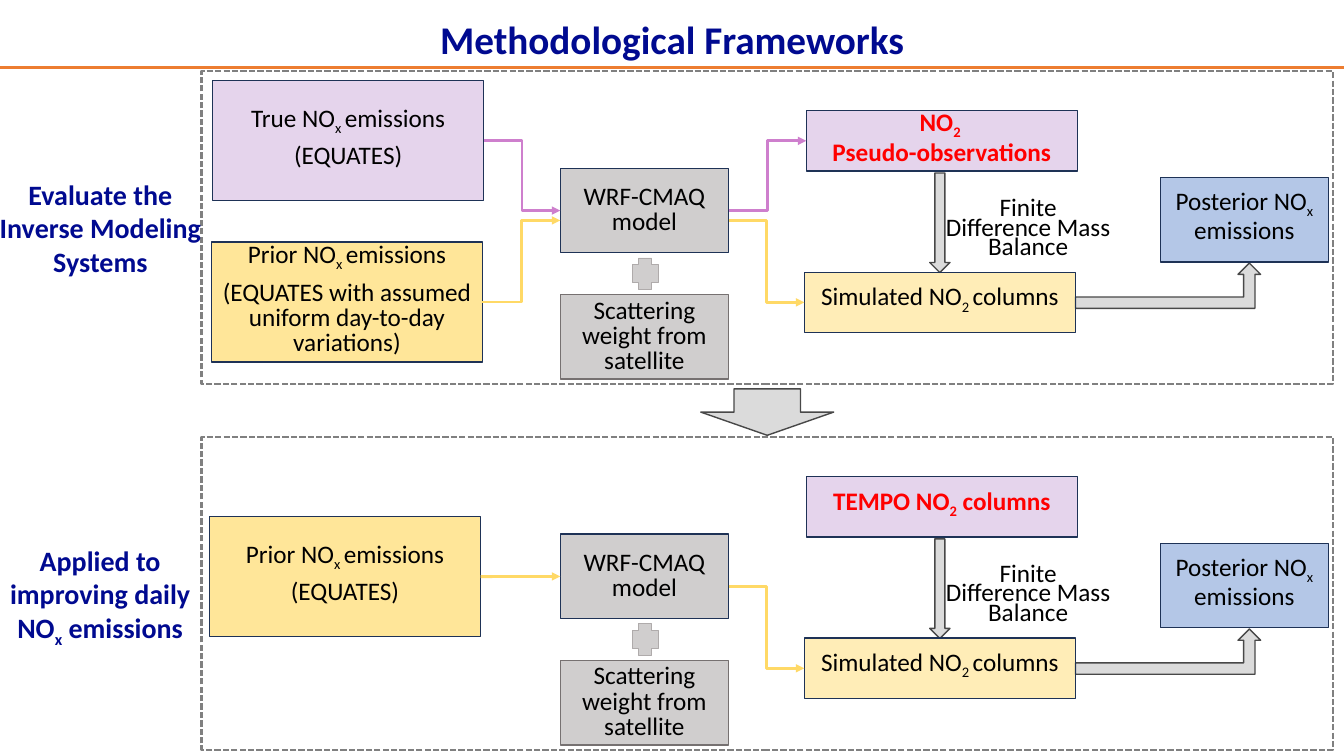
from dataclasses import dataclass

from lxml.etree import SubElement
from pptx import Presentation
from pptx.dml.color import RGBColor
from pptx.enum.dml import MSO_LINE
from pptx.enum.shapes import MSO_CONNECTOR, MSO_SHAPE
from pptx.enum.text import MSO_ANCHOR, MSO_AUTO_SIZE, PP_ALIGN
from pptx.oxml.ns import qn
from pptx.util import Cm, Pt


@dataclass(frozen=True)
class Theme:
    font: str = "Calibri"
    title_size: int = 28
    label_size: int = 20
    body_size: int = 18
    navy: str = "000A90"
    black: str = "000000"
    red: str = "FF0000"
    outline: str = "1E3256"
    lilac: str = "DBC2E5"
    purple: str = "CE7FCD"
    sand: str = "FFE699"
    gold: str = "FFD966"
    blue: str = "B4C7E7"
    grey: str = "D0CECE"
    grey_line: str = "767171"
    plus_line: str = "AFABAB"
    arrow_fill: str = "DBDBDB"
    arrow_line: str = "484848"
    frame: str = "808080"
    rule: str = "ED7D31"


theme = Theme()
presentation = Presentation()
presentation.slide_width, presentation.slide_height = Cm(33.87), Cm(19.05)
slide = presentation.slides.add_slide(presentation.slide_layouts[5])
shapes = slide.shapes


def write(shape, paragraphs, size=theme.body_size, color=theme.black, bold=False,
          spacing=None, gap=0):
    """Fill a shape with centred paragraphs; every second run is a subscript."""
    frame = shape.text_frame
    frame.word_wrap = True
    for number, runs in enumerate(paragraphs):
        paragraph = frame.add_paragraph() if number else frame.paragraphs[0]
        paragraph.alignment = PP_ALIGN.CENTER
        if spacing:
            paragraph.line_spacing = Pt(spacing)
        if number and gap:
            paragraph.space_before = Pt(gap)
        for position, text in enumerate(runs):
            run = paragraph.add_run()
            run.text = text
            run.font.name, run.font.size, run.font.bold = theme.font, Pt(size), bold
            run.font.color.rgb = RGBColor.from_string(color)
            if position % 2:
                run.font._element.set("baseline", "-25000")


def block(box, fill, outline=theme.outline, kind=MSO_SHAPE.RECTANGLE, width=1, opacity=100):
    shape = shapes.add_shape(kind, *map(Cm, box))
    shape.shadow.inherit = False
    shape.line.color.rgb = RGBColor.from_string(outline)
    shape.line.width = Pt(width)
    if fill is None:
        shape.fill.background()
        return shape
    shape.fill.solid()
    shape.fill.fore_color.rgb = RGBColor.from_string(fill)
    if opacity < 100:
        color = shape._element.spPr.find(qn("a:solidFill"))[0]
        SubElement(color, qn("a:alpha")).set("val", str(opacity * 1000))
    shape.text_frame.vertical_anchor = MSO_ANCHOR.MIDDLE
    return shape


# Title and rule
title = shapes.title
title.left, title.top, title.width, title.height = Cm(0), Cm(0.25), Cm(33.87), Cm(1.45)
title.text_frame.vertical_anchor = MSO_ANCHOR.TOP
title.text_frame.auto_size = MSO_AUTO_SIZE.NONE
write(title, [["Methodological Frameworks"]], theme.title_size, theme.navy, True)

# Panels: shift, label left and width, label, observations, emission sources
panel_pitch = 9.22
true_source = (5.36, 2.03, theme.lilac, 70, theme.purple,
               [["True NO", "x ", "emissions"], ["(EQUATES)"]])
assumed_source = (5.33, 6.1, theme.sand, 100, theme.gold,
                  [["Prior NO", "x ", "emissions"],
                   ["(EQUATES with assumed uniform day-to-day variations)"]])
prior_source = (5.28, 13.02, theme.sand, 100, theme.gold,
                [["Prior NO", "x ", "emissions"], ["(EQUATES)"]])
panels = [
    (-0.33, 5.72, ["Evaluate the Inverse Modeling Systems"],
     [["NO", "2 "], ["Pseudo-observations"]], [true_source, assumed_source]),
    (-0.08, 5.21, ["Applied to improving daily NO", "x", " emissions"],
     [["TEMPO NO", "2", " columns"]], [prior_source]),
]

flows = []  # kind, colour, source, source offset, target, target offset
for index, (label_left, label_width, label_runs, observed, sources) in enumerate(panels):
    shift = index * panel_pitch

    finite_difference = shapes.add_textbox(Cm(23.57), Cm(4.95 + shift), Cm(4.68), Cm(2.13))
    write(finite_difference, [["Finite Difference Mass Balance"]], spacing=14.2)
    mass_balance = block((22.43, 5.36 + shift, 2.51, 0.51), theme.arrow_fill,
                         theme.arrow_line, MSO_SHAPE.RIGHT_ARROW)
    mass_balance.rotation = 90
    block((27.1, 6.63 + shift, 4.67, 1.14), theme.arrow_fill, theme.arrow_line,
          MSO_SHAPE.BENT_UP_ARROW)

    posterior = block((29.24, 4.47 + shift, 4.24, 2.13), theme.blue)
    write(posterior, [["Posterior NO", "x ", "emissions"]], spacing=18)
    model = block((14.12, 4.24 + shift, 4.24, 2.13), theme.grey)
    write(model, [["WRF-CMAQ model"]], spacing=18)
    block((15.93, 6.5 + shift, 0.66, 0.79), theme.grey, theme.plus_line,
          MSO_SHAPE.CROSS, 0.5)
    scattering = block((14.12, 7.42 + shift, 4.24, 2.13), theme.grey, theme.grey_line)
    write(scattering, [["Scattering weight from satellite"]], spacing=18)
    simulated = block((20.27, 6.86 + shift, 6.83, 1.52), theme.sand, opacity=70)
    write(simulated, [["Simulated NO", "2 ", "columns"]], spacing=18)
    observations = block((20.32, 2.79 + shift, 6.83, 1.52), theme.lilac, opacity=70)
    write(observations, observed, color=theme.red, bold=True, spacing=18)

    for number, (left, top, fill, opacity, flow_color, text) in enumerate(sources):
        emissions = block((left, top, 6.83, 3.02), fill, opacity=opacity)
        write(emissions, text, spacing=18, gap=6)
        kind = MSO_CONNECTOR.ELBOW if len(sources) > 1 else MSO_CONNECTOR.STRAIGHT
        flows.append((kind, flow_color, emissions, 0, model, 0.25 * number))
    flows.append((MSO_CONNECTOR.ELBOW, theme.gold, model, 0.25, simulated, 0))
    if true_source in sources:
        flows.append((MSO_CONNECTOR.ELBOW, theme.purple, model, 0, observations, 0))

    panel_frame = block((5.08, 1.8 + shift, 28.52, 7.87), None, theme.frame, width=1.5)
    panel_frame.line.dash_style = MSO_LINE.SQUARE_DOT
    panel_label = shapes.add_textbox(Cm(label_left), Cm(4.34 + shift), Cm(label_width), Cm(2.82))
    write(panel_label, [label_runs], theme.label_size, theme.navy, True)

next_step = block((18.75, 8.71, 1.17, 3.35), theme.arrow_fill, theme.arrow_line,
                  MSO_SHAPE.RIGHT_ARROW)
next_step.rotation = 90

# Flows between blocks, and the rule under the title
for kind, color, source, source_offset, target, target_offset in flows:
    flow = shapes.add_connector(
        kind,
        source.left + source.width, source.top + source.height // 2 + Cm(source_offset),
        target.left, target.top + target.height // 2 + Cm(target_offset))
    if not source_offset:
        flow.begin_connect(source, 3)
    if not target_offset:
        flow.end_connect(target, 1)
    flow.line.color.rgb = RGBColor.from_string(color)
    flow.line.width = Pt(2)
    SubElement(flow.line._get_or_add_ln(), qn("a:tailEnd")).set("type", "triangle")
    SubElement(flow._element.spPr, qn("a:effectLst"))

title_rule = shapes.add_connector(MSO_CONNECTOR.STRAIGHT, Cm(0), Cm(1.7), Cm(33.87), Cm(1.7))
title_rule.line.color.rgb = RGBColor.from_string(theme.rule)
title_rule.line.width = Pt(2.25)
SubElement(title_rule._element.spPr, qn("a:effectLst"))

presentation.save("out.pptx")
